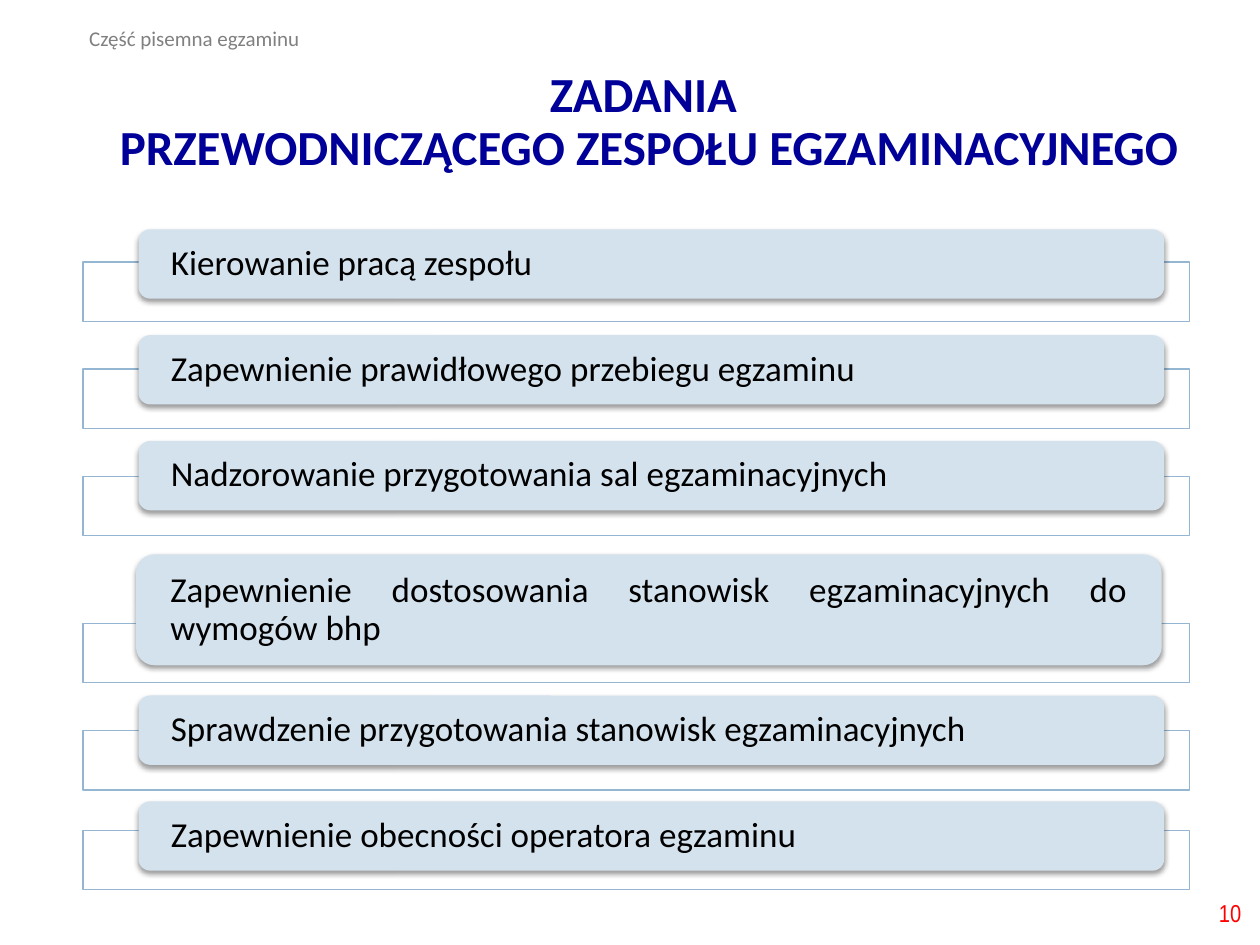
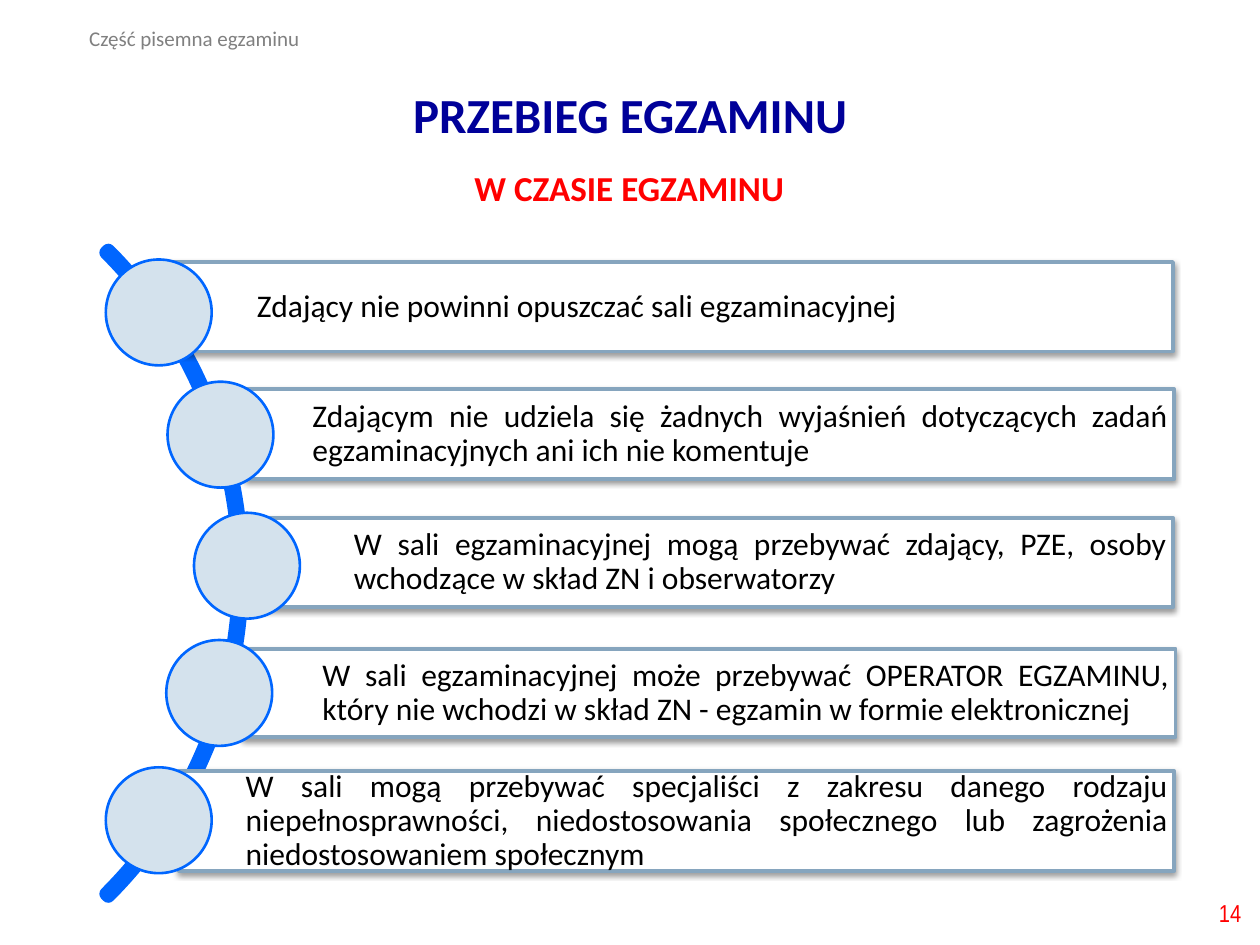
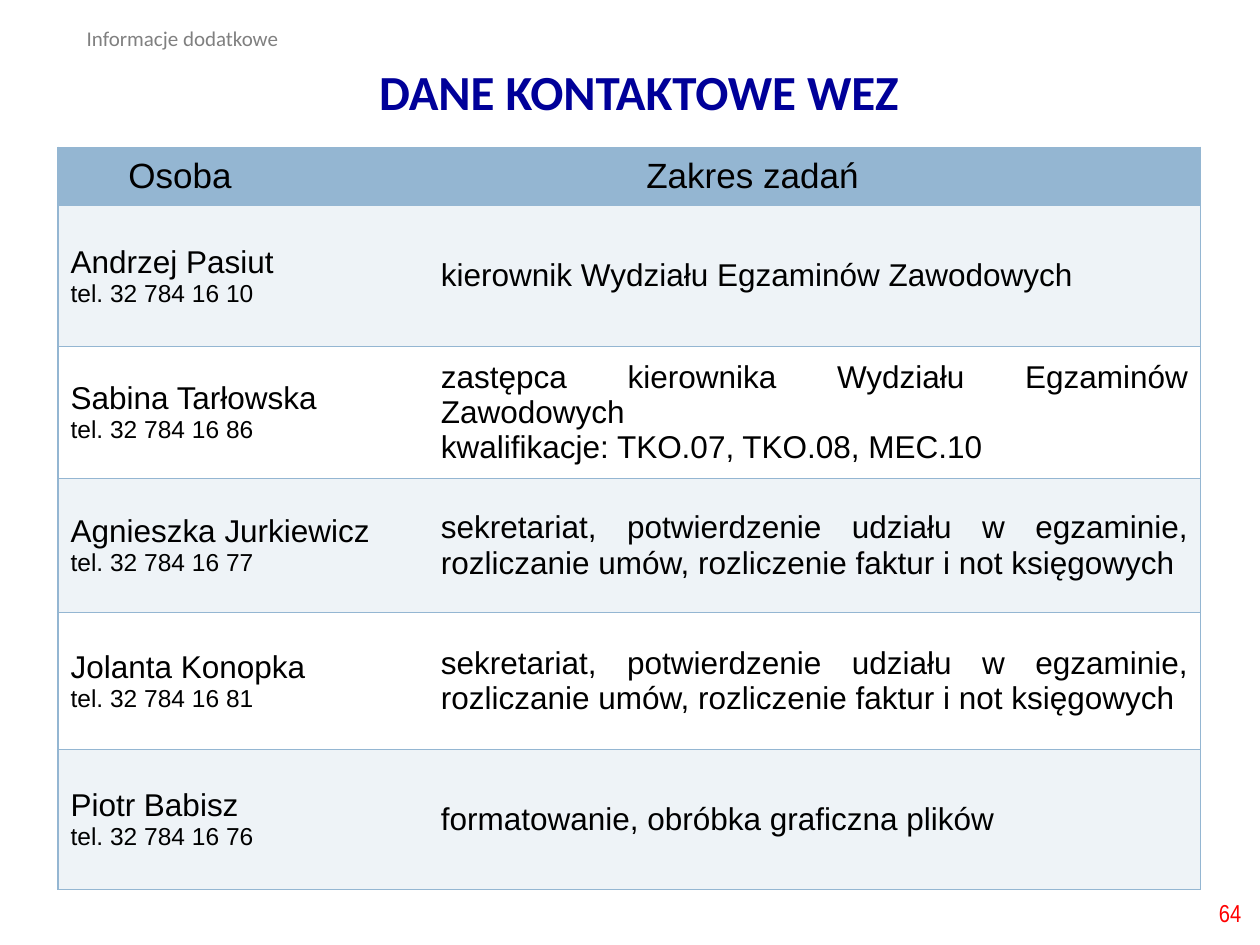
from lxml.etree import SubElement
from pptx import Presentation
from pptx.dml.color import RGBColor
from pptx.enum.shapes import MSO_SHAPE
from pptx.enum.text import MSO_ANCHOR, MSO_AUTO_SIZE, PP_ALIGN
from pptx.oxml.ns import qn
from pptx.util import Inches, Pt

NAVY, RED, GREY, BLACK, WHITE = "000099", "FF0000", "808080", "000000", "FFFFFF"
PALE, SKY, STEEL, BRIGHT, BAND = "D4E2ED", "94B6D2", "86A5BE", "0066FF", "EEF3F7"
ARC_FILL = "7B3D17"
LEFT, CENTER, RIGHT, JUSTIFY = PP_ALIGN.LEFT, PP_ALIGN.CENTER, PP_ALIGN.RIGHT, PP_ALIGN.JUSTIFY

WRITTEN_PART = "Część pisemna egzaminu"
TASKS = [
    (1.1, 1.82, 0.55, 2.08, LEFT, "Kierowanie pracą zespołu"),
    (1.1, 2.66, 0.55, 2.93, LEFT, "Zapewnienie prawidłowego przebiegu egzaminu"),
    (1.1, 3.5, 0.55, 3.78, LEFT, "Nadzorowanie przygotowania sal egzaminacyjnych"),
    (1.08, 4.4, 0.88, 4.95, JUSTIFY,
     "Zapewnienie dostosowania stanowisk egzaminacyjnych do wymogów bhp"),
    (1.1, 5.52, 0.55, 5.8, LEFT, "Sprawdzenie przygotowania stanowisk egzaminacyjnych"),
    (1.1, 6.36, 0.55, 6.59, LEFT, "Zapewnienie obecności operatora egzaminu"),
]
RULES = [
    ((1.21, 2.08, 8.1, 0.71), (0.84, 2.06), 0.83, LEFT,
     "Zdający nie powinni opuszczać sali egzaminacyjnej"),
    ((1.95, 3.09, 7.37, 0.71), (1.33, 3.03), 0.53, JUSTIFY,
     "Zdającym nie udziela się żadnych wyjaśnień dotyczących zadań "
     "egzaminacyjnych ani ich nie komentuje"),
    ((2.08, 4.11, 7.23, 0.71), (1.54, 4.07), 0.73, JUSTIFY,
     "W sali egzaminacyjnej mogą przebywać zdający, PZE, osoby "
     "wchodzące w skład ZN i obserwatorzy"),
    ((1.93, 5.15, 7.4, 0.7), (1.32, 5.08), 0.63, JUSTIFY,
     "W sali egzaminacyjnej może przebywać OPERATOR EGZAMINU, "
     "który nie wchodzi w skład ZN - egzamin w formie elektronicznej"),
    ((1.42, 6.12, 7.9, 0.79), (0.84, 6.09), 0.53, JUSTIFY,
     "W sali mogą przebywać specjaliści z zakresu danego rodzaju niepełnosprawności, "
     "niedostosowania społecznego lub zagrożenia niedostosowaniem społecznym"),
]
OFFICE_DUTY = ("sekretariat, potwierdzenie udziału w egzaminie, "
               "rozliczanie umów, rozliczenie faktur i not księgowych")
CONTACTS = [
    ("Andrzej Pasiut", "10", LEFT, ["kierownik Wydziału Egzaminów Zawodowych"]),
    ("Sabina Tarłowska", "86", JUSTIFY,
     ["zastępca kierownika Wydziału Egzaminów Zawodowych",
      "kwalifikacje: TKO.07, TKO.08, MEC.10"]),
    ("Agnieszka Jurkiewicz", "77", JUSTIFY, [OFFICE_DUTY]),
    ("Jolanta Konopka", "81", JUSTIFY, [OFFICE_DUTY]),
    ("Piotr Babisz", "76", JUSTIFY, ["formatowanie, obróbka graficzna plików"]),
]


def rgb(code):
    return RGBColor.from_string(code)


def inches(box):
    return [Inches(length) for length in box]


def set_margins(holder, left=0.1, top=0.05, right=0.1, bottom=0.05):
    holder.margin_left, holder.margin_top = Inches(left), Inches(top)
    holder.margin_right, holder.margin_bottom = Inches(right), Inches(bottom)


def write(frame, lines, font="Calibri", color=BLACK, bold=False, align=LEFT, spacing=1.0):
    for index, (words, size) in enumerate(lines):
        paragraph = frame.add_paragraph() if index else frame.paragraphs[0]
        paragraph.alignment, paragraph.line_spacing = align, spacing
        for part, piece in enumerate(words.split("\n")):
            if part:
                paragraph.add_line_break()
            run = paragraph.add_run()
            run.text = piece
            run.font.name, run.font.size = font, Pt(size)
            run.font.bold, run.font.color.rgb = bold, rgb(color)


def add_label(slide, box, words, size, anchor=MSO_ANCHOR.MIDDLE, **style):
    frame = slide.shapes.add_textbox(*inches(box)).text_frame
    frame.word_wrap, frame.vertical_anchor = True, anchor
    write(frame, [(words, size)], **style)


def add_panel(slide, kind, box, fill, line=None, width=0.75, shadow=False):
    panel = slide.shapes.add_shape(kind, *inches(box))
    panel.shadow.inherit = False
    panel.fill.solid()
    panel.fill.fore_color.rgb = rgb(fill)
    if line:
        panel.line.color.rgb, panel.line.width = rgb(line), Pt(width)
    else:
        panel.line.fill.background()
    if shadow:
        effects = panel.element.spPr.find(qn("a:effectLst"))
        outer = SubElement(effects, qn("a:outerShdw"), blurRad="40000", dist="20000",
                           dir="5400000", rotWithShape="0")
        tone = SubElement(outer, qn("a:srgbClr"), val=BLACK)
        SubElement(tone, qn("a:alpha"), val="38000")
    return panel


def fill_panel(panel, words, size, align, **margins):
    frame = panel.text_frame
    frame.word_wrap, frame.vertical_anchor = True, MSO_ANCHOR.MIDDLE
    set_margins(frame, **margins)
    write(frame, [(words, size)], align=align, spacing=0.9)


def start_slide(deck, title_box, heading, section, number, section_left=0.61):
    slide = deck.slides.add_slide(deck.slide_layouts[5])
    title = slide.shapes.title
    title.left, title.top, title.width, title.height = inches(title_box)
    frame = title.text_frame
    frame.word_wrap, frame.auto_size = True, MSO_AUTO_SIZE.NONE
    frame.vertical_anchor = MSO_ANCHOR.MIDDLE
    write(frame, [(heading, 28)], color=NAVY, bold=True, align=CENTER, spacing=0.9)
    add_label(slide, (section_left, 0.15, 2.67, 0.3), section, 12,
              anchor=MSO_ANCHOR.TOP, color=GREY)
    add_label(slide, (7.7, 7.04, 2.25, 0.4), number, 14,
              font="Arial Narrow", color=RED, align=RIGHT)
    return slide


def add_task(slide, left, top, height, bracket_top, align, words):
    add_panel(slide, MSO_SHAPE.RECTANGLE, (0.66, bracket_top, 8.78, 0.47), WHITE, SKY)
    card = add_panel(slide, MSO_SHAPE.ROUNDED_RECTANGLE, (left, top, 8.14, height),
                     PALE, shadow=True)
    fill_panel(card, words, 20, align, left=0.23, top=0, right=0.23, bottom=0)


def add_rule(slide, box, dot, indent, align, words):
    bar = add_panel(slide, MSO_SHAPE.RECTANGLE, box, WHITE, STEEL, 2.25, shadow=True)
    fill_panel(bar, words, 18, align, left=indent, right=0.05)
    add_panel(slide, MSO_SHAPE.OVAL, (*dot, 0.84, 0.84), PALE, BRIGHT, 1.5)


def format_cell(cell, lines, fill, inner_side, align=LEFT, indent=0.1):
    cell.vertical_anchor = MSO_ANCHOR.MIDDLE
    set_margins(cell, left=indent)
    write(cell.text_frame, lines, font="Arial", align=align)
    properties = cell._tc.get_or_add_tcPr()
    for side in ("lnL", "lnR", "lnT", "lnB"):
        border = SubElement(properties, qn(f"a:{side}"), w="12700")
        if side == inner_side:
            SubElement(border, qn("a:noFill"))
        else:
            SubElement(SubElement(border, qn("a:solidFill")), qn("a:srgbClr"), val=SKY)
    cell.fill.solid()
    cell.fill.fore_color.rgb = rgb(fill)


def add_contacts(slide, box):
    table = slide.shapes.add_table(len(CONTACTS) + 1, 2, *inches(box)).table
    table.first_row = table.horz_banding = False
    for column, width in zip(table.columns, (2.94, 6.13)):
        column.width = Inches(width)
    for row, height in zip(table.rows, (0.46, 1.12, 1.05, 1.06, 1.09, 1.11)):
        row.height = Inches(height)
    format_cell(table.cell(0, 0), [("Osoba", 20)], SKY, "lnR", indent=0.56)
    format_cell(table.cell(0, 1), [("Zakres zadań", 20)], SKY, "lnL", indent=1.73)
    for index, (person, extension, align, duties) in enumerate(CONTACTS, 1):
        fill = BAND if index % 2 else WHITE
        phone = f"tel. 32 784 16 {extension}"
        format_cell(table.cell(index, 0), [(person, 18), (phone, 14)], fill, "lnR")
        format_cell(table.cell(index, 1), [(duty, 18) for duty in duties], fill, "lnL", align)


def build_tasks(deck):
    slide = start_slide(deck, (0.66, 0.72, 8.98, 0.51),
                        "ZADANIA \nPRZEWODNICZĄCEGO ZESPOŁU EGZAMINACYJNEGO",
                        WRITTEN_PART, "10")
    for task in TASKS:
        add_task(slide, *task)


def build_rules(deck):
    slide = start_slide(deck, (0.69, 0.63, 8.62, 0.6), "PRZEBIEG EGZAMINU",
                        WRITTEN_PART, "14")
    add_label(slide, (2.38, 1.21, 5.23, 0.6), "W CZASIE EGZAMINU", 20,
              color=RED, bold=True, align=CENTER, spacing=0.9)
    arc = add_panel(slide, MSO_SHAPE.BLOCK_ARC, (-5.32, 0.93, 7.24, 7.24),
                    ARC_FILL, BRIGHT, 8)
    for index, value in enumerate((189, 27, 0.003)):
        arc.adjustments[index] = value
    for rule in RULES:
        add_rule(slide, *rule)


def build_contacts(deck):
    slide = start_slide(deck, (0.17, 0.5, 9.8, 0.5), "DANE KONTAKTOWE WEZ",
                        "Informacje dodatkowe", "64", section_left=0.59)
    add_contacts(slide, (0.46, 1.17, 9.07, 5.88))


def main():
    deck = Presentation()
    deck.slide_width, deck.slide_height = Inches(10), Inches(7.5)
    build_tasks(deck)
    build_rules(deck)
    build_contacts(deck)
    deck.save("out.pptx")


if __name__ == "__main__":
    main()
